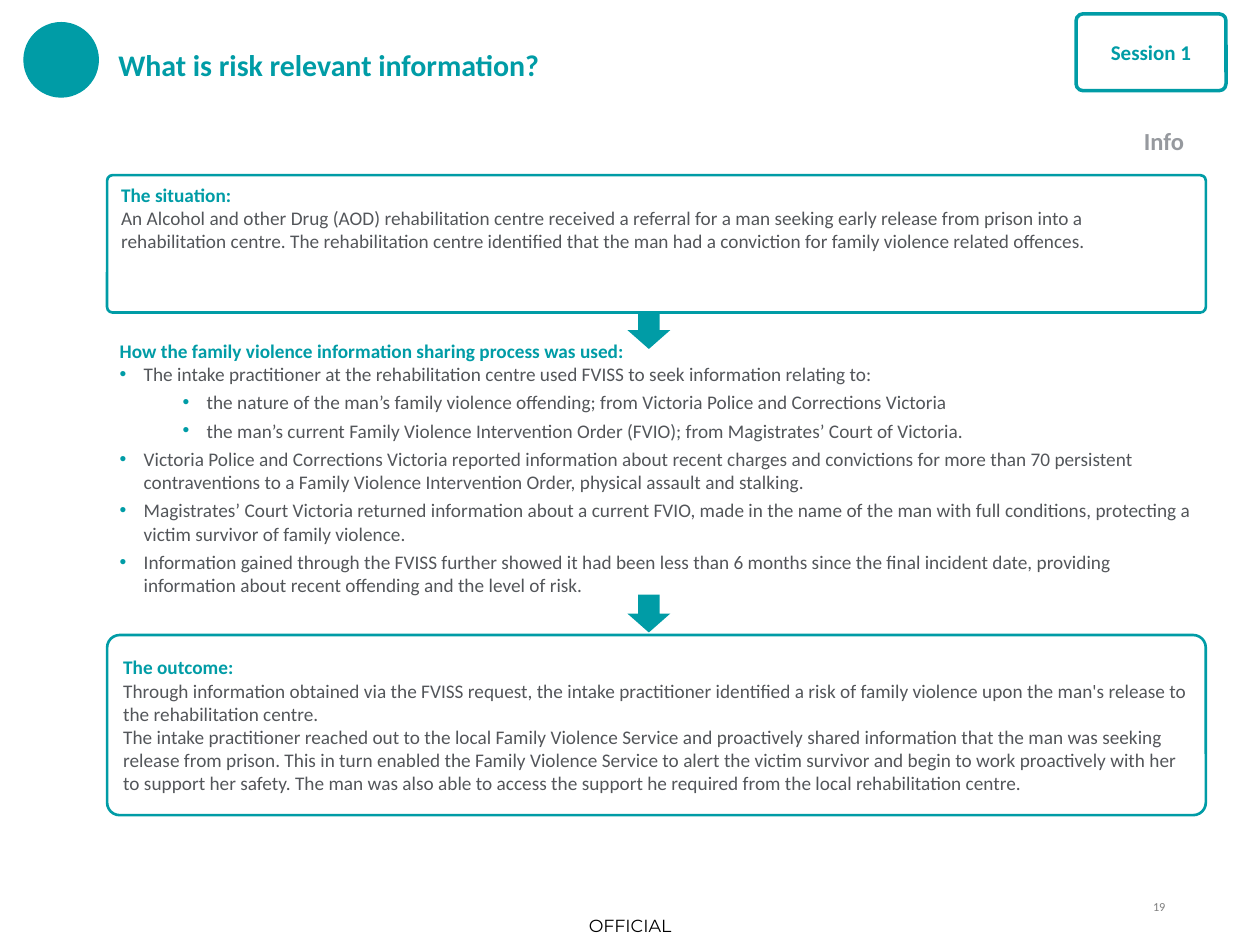
from dataclasses import dataclass

from lxml import etree
from pptx import Presentation
from pptx import util as u
from pptx.dml.color import RGBColor
from pptx.enum import shapes, text
from pptx.oxml.ns import qn

TEAL, BODY_GREY, INFO_GREY = "009CA6", "53565A", "96999E"
NUMBER_GREY, BLACK, WHITE = "7F7F7F", "000000", "FFFFFF"
LEFT, CENTRE, RIGHT = text.PP_ALIGN.LEFT, text.PP_ALIGN.CENTER, text.PP_ALIGN.RIGHT
TOP, MIDDLE = text.MSO_ANCHOR.TOP, text.MSO_ANCHOR.MIDDLE
SHAPE = shapes.MSO_SHAPE

presentation = Presentation()
presentation.slide_width, presentation.slide_height = u.Inches(10), u.Inches(7.5)
COLUMN = presentation.slide_width / 100
ROW = presentation.slide_height / 75


@dataclass
class Area:
    """A place on a grid of 100 columns by 75 rows."""
    column: float
    row: float
    columns: float
    rows: float

    def frame(self) -> tuple:
        return (int(self.column * COLUMN), int(self.row * ROW),
                int(self.columns * COLUMN), int(self.rows * ROW))


@dataclass
class Line:
    words: str
    size: float = 11
    colour: str = BODY_GREY
    bold: bool = False
    align: text.PP_ALIGN = LEFT
    after: float = 0
    bullet_level: int | None = None
    font: str = "Calibri"


@dataclass
class Panel:
    area: Area
    corner: float
    weight: float
    lines: list[Line]
    anchor: text.MSO_ANCHOR
    side_inset: float = 0.1


def rgb(colour: str) -> RGBColor:
    return RGBColor.from_string(colour)


def heading(words: str, size: float = 11, **options) -> Line:
    return Line(words, size, TEAL, True, **options)


def bullet(words: str, level: int = 0) -> Line:
    return Line(words, after=3, bullet_level=level)


def set_bullet(paragraph, level: int | None) -> None:
    properties = paragraph._p.get_or_add_pPr()
    if level is None:
        properties.set("marL", "0")
        properties.set("indent", "0")
        etree.SubElement(properties, qn("a:buNone"))
        return
    paragraph.level = level
    properties.set("marL", str(u.Inches(0.19 + 0.5 * level)))
    properties.set("indent", str(u.Inches(-0.19)))
    colour = etree.SubElement(properties, qn("a:buClr"))
    etree.SubElement(colour, qn("a:srgbClr"), val=TEAL)
    etree.SubElement(properties, qn("a:buFont"), typeface="Arial")
    etree.SubElement(properties, qn("a:buChar"), char="•")


def write(frame, lines: list[Line], anchor=TOP, side=0.1, end=0.05) -> None:
    frame.word_wrap = True
    frame.auto_size = text.MSO_AUTO_SIZE.NONE
    frame.vertical_anchor = anchor
    frame.margin_left = frame.margin_right = u.Inches(side)
    frame.margin_top = frame.margin_bottom = u.Inches(end)
    for index, line in enumerate(lines):
        paragraph = frame.add_paragraph() if index else frame.paragraphs[0]
        paragraph.text = line.words
        set_bullet(paragraph, line.bullet_level)
        paragraph.alignment = line.align
        paragraph.space_before = u.Pt(0)
        paragraph.space_after = u.Pt(line.after)
        font = paragraph.font
        font.name, font.size, font.bold = line.font, u.Pt(line.size), line.bold
        font.color.rgb = rgb(line.colour)


def add_shape(slide, kind, area: Area, fill: str, outline: str | None = None,
              weight: float = 0.75):
    shape = slide.shapes.add_shape(kind, *area.frame())
    shape.shadow.inherit = False
    shape.fill.solid()
    shape.fill.fore_color.rgb = rgb(fill)
    if outline:
        shape.line.color.rgb = rgb(outline)
        shape.line.width = u.Pt(weight)
    else:
        shape.line.fill.background()
    return shape


def add_panel(slide, panel: Panel) -> None:
    shape = add_shape(slide, SHAPE.ROUNDED_RECTANGLE, panel.area, WHITE, TEAL, panel.weight)
    shape.adjustments[0] = panel.corner
    write(shape.text_frame, panel.lines, panel.anchor, panel.side_inset)


def add_label(slide, area: Area, line: Line, anchor=MIDDLE, side=0.0, end=0.0) -> None:
    box = slide.shapes.add_textbox(*area.frame())
    write(box.text_frame, [line], anchor, side, end)


def place(placeholder, area: Area) -> None:
    (placeholder.left, placeholder.top,
     placeholder.width, placeholder.height) = area.frame()


slide = presentation.slides.add_slide(presentation.slide_layouts[1])

# Title with its round marker
add_shape(slide, SHAPE.OVAL, Area(1.9, 1.8, 5.9, 5.9), TEAL, TEAL)
title = slide.shapes.title
place(title, Area(9.4, 1.9, 70.1, 6.5))
write(title.text_frame, [heading("What is risk relevant information?", 17.1, after=3.4)],
      MIDDLE, 0, 0)

# How the process was used
body = slide.placeholders[1]
place(body, Area(8.5, 26.4, 87.1, 21.5))
write(body.text_frame, [
    heading("How the family violence information sharing process was used:"),
    bullet("The intake practitioner at the rehabilitation centre used FVISS to seek "
           "information relating to:"),
    bullet("the nature of the man’s family violence offending; from Victoria Police and "
           "Corrections Victoria", 1),
    bullet("the man’s current Family Violence Intervention Order (FVIO); from "
           "Magistrates’ Court of Victoria.", 1),
    bullet("Victoria Police and Corrections Victoria reported information about recent "
           "charges and convictions for more than 70 persistent contraventions to a Family "
           "Violence Intervention Order, physical assault and stalking."),
    bullet("Magistrates’ Court Victoria returned information about a current FVIO, made in "
           "the name of the man with full conditions, protecting a victim survivor of family "
           "violence."),
    bullet("Information gained through the FVISS further showed it had been less than 6 "
           "months since the final incident date, providing information about recent "
           "offending and the level of risk."),
])

# Outlined panels: session, situation and outcome
panels = [
    Panel(Area(85.4, 1.1, 11.9, 6.1), 0.09, 2,
          [heading("Session 1", 12, align=CENTRE)], MIDDLE, 0.2),
    Panel(Area(8.5, 13.9, 87.2, 10.9), 0.04, 1.5, [
        heading("The situation:"),
        Line("An Alcohol and other Drug (AOD) rehabilitation centre received a referral for a "
             "man seeking early release from prison into a rehabilitation centre. The "
             "rehabilitation centre identified that the man had a conviction for family "
             "violence related offences."),
    ], TOP),
    Panel(Area(8.5, 50.4, 87.2, 14.3), 0.07, 1.5, [
        heading("The outcome:"),
        Line("Through information obtained via the FVISS request, the intake practitioner "
             "identified a risk of family violence upon the man's release to the "
             "rehabilitation centre."),
        Line("The intake practitioner reached out to the local Family Violence Service and "
             "proactively shared information that the man was seeking release from prison. "
             "This in turn enabled the Family Violence Service to alert the victim survivor "
             "and begin to work proactively with her to support her safety. The man was also "
             "able to access the support he required from the local rehabilitation centre."),
    ], MIDDLE),
]
for panel in panels:
    add_panel(slide, panel)

# Arrows from one step to the next
for arrow_row in (24.7, 47.2):
    add_shape(slide, SHAPE.DOWN_ARROW, Area(49.8, arrow_row, 3.4, 3), TEAL)

# Small labels
add_label(slide, Area(89.8, 9.5, 9, 3.4), Line("Info", 14, INFO_GREY, True), TOP, 0.1, 0.05)
add_label(slide, Area(44.9, 71.9, 10.2, 3.1),
          Line("OFFICIAL", 10, BLACK, align=CENTRE, font="Montserrat"))
add_label(slide, Area(89.1, 71.4, 3.4, 2), Line("19", 7, NUMBER_GREY, align=RIGHT), TOP)

presentation.save("out.pptx")
